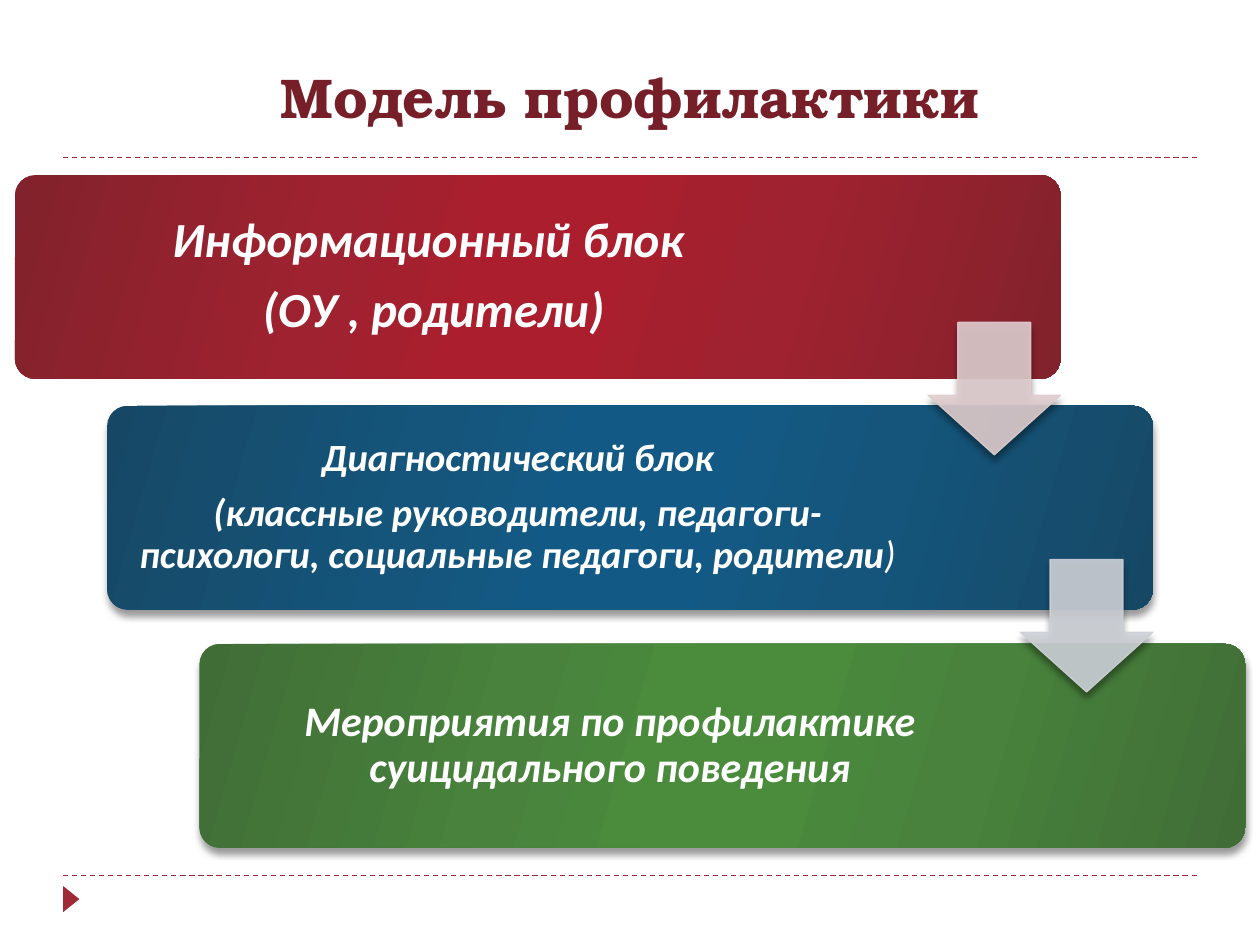
import pptx
import pptx.util
import pptx.dml.color
import pptx.enum.dml
import pptx.enum.shapes
import pptx.enum.text
import pptx.oxml.ns
from lxml import etree

Cm, Pt = pptx.util.Cm, pptx.util.Pt
SHAPE = pptx.enum.shapes.MSO_SHAPE
ANCHOR = pptx.enum.text.MSO_ANCHOR
CENTER = pptx.enum.text.PP_ALIGN.CENTER
qn = pptx.oxml.ns.qn

# Content: each paragraph is a list of (text, bold) runs
TITLE = "Модель профилактики"
BLOCKS = [
    {"paragraphs": [[("Информационный блок ", True)], [("(ОУ , родители)", True)]],
     "size": 28, "top": 3.53, "text_width": 16.64, "inset": 0.3, "shadow": False,
     "colors": ("82222C", "9E222F", "AA1E2E")},
    {"paragraphs": [[("Диагностический блок", True)],
                    [("(классные руководители, педагоги-психологи, "
                      "социальные педагоги, родители", True), (")", False)]],
     "size": 22, "top": 8.18, "text_width": 16.31, "inset": 0.23, "shadow": True,
     "colors": ("164865", "15557B", "125A85")},
    {"paragraphs": [[("Мероприятия по профилактике суицидального поведения", True)]],
     "size": 24, "top": 12.98, "text_width": 16.31, "inset": 0.25, "shadow": True,
     "colors": ("406D36", "48823C", "4A8B3C")},
]
ARROWS = [("DFCDCE", 6.5), ("CDD1D7", 11.28)]  # colour, top

# Measures in centimetres
BLOCK_LEFT, BLOCK_STEP = 0.3, 1.86
BLOCK_WIDTH, BLOCK_HEIGHT = 21.08, 4.11
TEXT_MARGIN = 0.12
ARROW_SIZE = 2.67
RULE_LEFT, RULE_RIGHT, RULE_TOPS = 1.27, 24.13, (3.18, 17.65)
ACCENT = "9F2936"


def color(value):
    return pptx.dml.color.RGBColor.from_string(value)


def set_all(target, values):
    for name, value in values.items():
        setattr(target, name, value)


def add_element(parent, tag, **attributes):
    element = etree.SubElement(parent, qn(tag))
    for name, value in attributes.items():
        element.set(name, str(value))
    return element


def box(left, top, width, height):
    return Cm(left), Cm(top), Cm(width), Cm(height)


def add_shadow(shape):
    effects = shape._element.spPr.find(qn("a:effectLst"))
    shadow = add_element(effects, "a:outerShdw", blurRad=Pt(4), dist=Pt(3.4),
                         dir=90 * 60000, algn="ctr", rotWithShape=0)
    add_element(add_element(shadow, "a:srgbClr", val="000000"), "a:alpha", val=40000)


def add_plain_shape(kind, *place):
    shape = slide.shapes.add_shape(kind, *box(*place))
    shape.shadow.inherit = False
    shape.line.fill.background()
    return shape


def fill_gradient(shape, edge, middle, center):
    shape.fill.gradient()
    gradient = shape._element.spPr.find(qn("a:gradFill"))
    stops = gradient.find(qn("a:gsLst"))
    for stop in list(stops):
        stops.remove(stop)
    for position, value in zip((0, 30, 45, 55, 73, 100),
                               (edge, middle, center, center, middle, edge)):
        stop = add_element(stops, "a:gs", pos=position * 1000)
        add_element(stop, "a:srgbClr", val=value)
    direction = gradient.find(qn("a:lin"))
    direction.set("ang", str(16 * 60000))
    direction.set("scaled", "0")


def add_block(block, left):
    panel = add_plain_shape(SHAPE.ROUNDED_RECTANGLE, left, block["top"],
                            BLOCK_WIDTH, BLOCK_HEIGHT)
    panel.adjustments[0] = 0.1
    fill_gradient(panel, *block["colors"])
    if block["shadow"]:
        add_shadow(panel)

    label = slide.shapes.add_textbox(*box(
        left + TEXT_MARGIN, block["top"] + TEXT_MARGIN,
        block["text_width"], BLOCK_HEIGHT - 2 * TEXT_MARGIN))
    frame = label.text_frame
    set_all(frame, {"word_wrap": True, "vertical_anchor": ANCHOR.MIDDLE})
    sides = ("left", "top", "right", "bottom")
    set_all(frame, {f"margin_{side}": Cm(block["inset"]) for side in sides})
    for index, runs in enumerate(block["paragraphs"]):
        paragraph = frame.add_paragraph() if index else frame.paragraphs[0]
        set_all(paragraph, {"alignment": CENTER, "line_spacing": 0.9,
                            "space_after": Pt(0.35 * block["size"])})
        for text, bold in runs:
            run = paragraph.add_run()
            run.text = text
            set_all(run.font, {"name": "Calibri", "size": Pt(block["size"]),
                               "bold": bold, "italic": True})
            run.font.color.rgb = color("FFFFFF")


def add_arrow(value, left, top):
    arrow = add_plain_shape(SHAPE.DOWN_ARROW, left, top, ARROW_SIZE, ARROW_SIZE)
    arrow.adjustments[0], arrow.adjustments[1] = 0.55, 0.45
    arrow.line.width = Pt(0.75)
    for fill in (arrow.fill, arrow.line.fill):
        fill.solid()
        fill.fore_color.rgb = color(value)
    for rgb in arrow._element.spPr.iter(qn("a:srgbClr")):
        add_element(rgb, "a:alpha", val=90000)
    add_shadow(arrow)


presentation = pptx.Presentation()
set_all(presentation, {"slide_width": Cm(25.4), "slide_height": Cm(19.05)})
slide = presentation.slides.add_slide(presentation.slide_layouts[5])

# Dashed rules and corner marker
for top in RULE_TOPS:
    rule = slide.shapes.add_connector(pptx.enum.shapes.MSO_CONNECTOR.STRAIGHT,
                                      Cm(RULE_LEFT), Cm(top), Cm(RULE_RIGHT), Cm(top))
    rule.line.color.rgb = color(ACCENT)
    set_all(rule.line, {"width": Pt(0.75),
                        "dash_style": pptx.enum.dml.MSO_LINE.DASH})
    add_element(rule._element.spPr, "a:effectLst")
marker = add_plain_shape(SHAPE.ISOSCELES_TRIANGLE, 1.17, 17.96, 0.53, 0.33)
marker.rotation = 90
marker.fill.solid()
marker.fill.fore_color.rgb = color(ACCENT)

# Title
title = slide.shapes.title
set_all(title, dict(zip(("left", "top", "width", "height"),
                        box(1.27, 0.43, 22.86, 2.31))))
title.text_frame.text = TITLE
title.text_frame.vertical_anchor = ANCHOR.BOTTOM
heading = title.text_frame.paragraphs[0]
heading.alignment = CENTER
heading_font = heading.runs[0].font
set_all(heading_font, {"name": "TeX Gyre Bonum", "size": Pt(32), "bold": True})
heading_font.color.rgb = color("771F28")

# Staircase of blocks, then the arrows at their right edges
lefts = [BLOCK_LEFT + BLOCK_STEP * index for index in range(len(BLOCKS))]
for block, left in zip(BLOCKS, lefts):
    add_block(block, left)
for (value, top), left in zip(ARROWS, lefts):
    add_arrow(value, left + BLOCK_WIDTH - ARROW_SIZE, top)

presentation.save("out.pptx")
